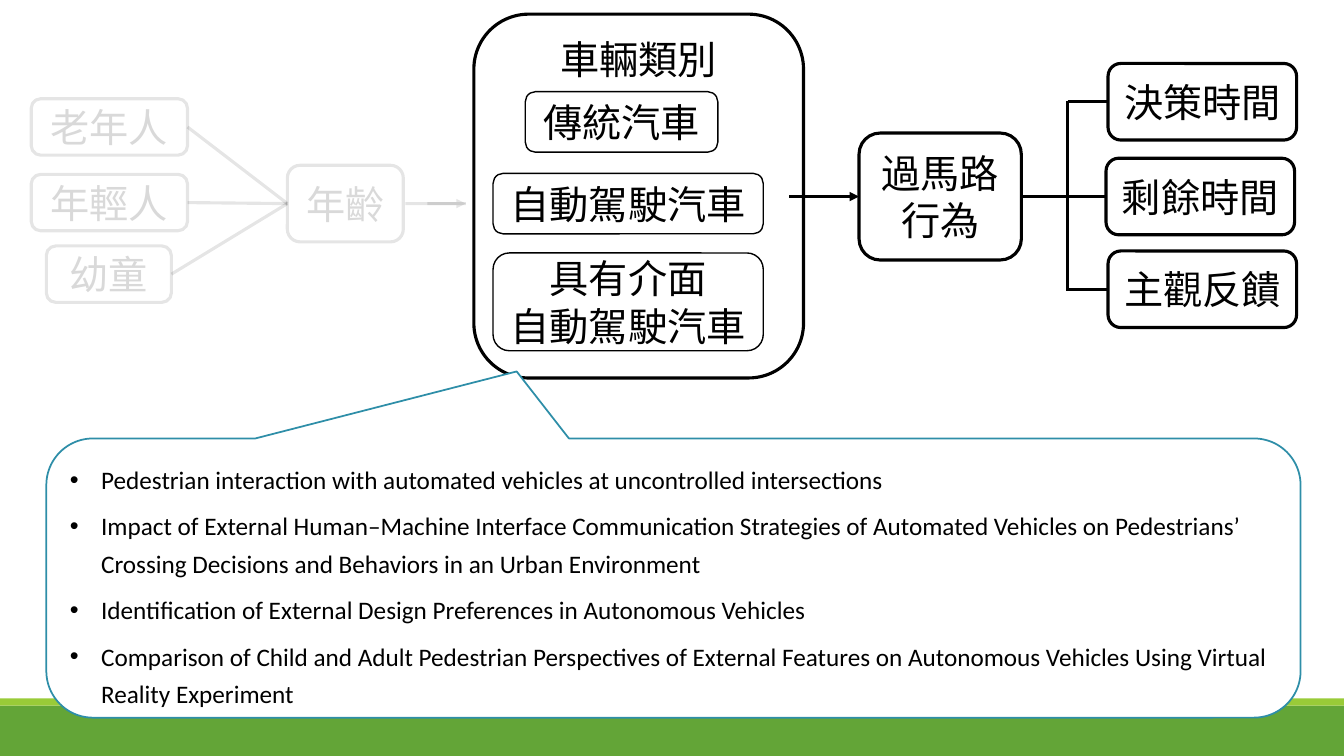
from dataclasses import dataclass

from pptx import Presentation
from pptx.dml.color import RGBColor
from pptx.enum.shapes import MSO_CONNECTOR, MSO_SHAPE as SHAPE
from pptx.enum.text import MSO_ANCHOR as ANCHOR, PP_ALIGN as ALIGN
from pptx.oxml.ns import qn
from pptx.util import Inches, Pt
from lxml.etree import SubElement

LEFT, RIGHT = 1, 3


@dataclass(frozen=True)
class Theme:
    font: str = "Calibri"
    ink: RGBColor = RGBColor.from_string("000000")
    pale_ink: RGBColor = RGBColor.from_string("D9D9D9")
    paper: RGBColor = RGBColor.from_string("FFFFFF")
    green: RGBColor = RGBColor.from_string("63A537")
    lime: RGBColor = RGBColor.from_string("99CB38")
    teal: RGBColor = RGBColor.from_string("2E8EA8")
    label_size: float = 28
    list_size: float = 18
    thick: float = 2.25
    thin: float = 1
    callout_line: float = 1.25
    faded_percent: int = 10


class SlideBuilder:
    def __init__(self, slide, theme):
        self.shapes = slide.shapes
        self.theme = theme

    def fade_line(self, shape):
        """Make the outline or connector almost transparent."""
        for color in shape._element.spPr.iter(qn("a:srgbClr")):
            alpha = SubElement(color, qn("a:alpha"))
            alpha.set("val", str(self.theme.faded_percent * 1000))

    def style_text(self, paragraph, size, color):
        for span in paragraph.runs:
            span.font.name = self.theme.font
            span.font.size = Pt(size)
            span.font.color.rgb = color

    def shape(self, kind, place, fill=None, line=None, width=1):
        shape = self.shapes.add_shape(kind, *map(Inches, place))
        shape.shadow.inherit = False
        if fill is None:
            shape.fill.background()
        else:
            shape.fill.solid()
            shape.fill.fore_color.rgb = fill
        if line is None:
            shape.line.fill.background()
        else:
            shape.line.color.rgb = line
            shape.line.width = Pt(width)
        return shape

    def bar(self, place, color):
        return self.shape(SHAPE.RECTANGLE, place, fill=color)

    def box(self, text, place, width=None, anchor=ANCHOR.MIDDLE, faded=False):
        theme = self.theme
        box = self.shape(SHAPE.ROUNDED_RECTANGLE, place,
                         line=theme.ink, width=width or theme.thick)
        frame = box.text_frame
        frame.word_wrap = True
        frame.vertical_anchor = anchor
        frame.text = text
        for para in frame.paragraphs:
            para.alignment = ALIGN.CENTER
            self.style_text(para, theme.label_size, theme.pale_ink if faded else theme.ink)
        if faded:
            self.fade_line(box)
        return box

    def line(self, start, end, begin=None, finish=None, arrow=False, faded=False):
        """Draw a line; begin and finish are optional (box, side) joints."""
        line = self.shapes.add_connector(
            MSO_CONNECTOR.STRAIGHT, *map(Inches, (*start, *end)))
        if begin:
            line.begin_connect(*begin)
        if finish:
            line.end_connect(*finish)
        line.line.color.rgb = self.theme.ink
        line.line.width = Pt(self.theme.thick)
        if arrow:
            SubElement(line.line._get_or_add_ln(), qn("a:tailEnd")).set("type", "triangle")
        SubElement(line._element.spPr, qn("a:effectLst"))
        if faded:
            self.fade_line(line)
        return line

    def callout(self, items, place, adjustments):
        theme = self.theme
        callout = self.shape(SHAPE.ROUNDED_RECTANGULAR_CALLOUT, place,
                             theme.paper, theme.teal, theme.callout_line)
        for index, value in enumerate(adjustments):
            callout.adjustments[index] = value
        frame = callout.text_frame
        frame.word_wrap = True
        frame.vertical_anchor = ANCHOR.TOP
        frame.text = "\n".join(items)
        for index, para in enumerate(frame.paragraphs):
            para.alignment = ALIGN.LEFT
            para.line_spacing = 1.25
            para.space_before = Pt(3 if index else 0)
            para.space_after = Pt(3)
            props = para._p.get_or_add_pPr()
            props.set("marL", str(Inches(0.31)))
            props.set("indent", str(-Inches(0.31)))
            SubElement(props, qn("a:buFont")).set("typeface", "Arial")
            SubElement(props, qn("a:buChar")).set("char", "•")
            self.style_text(para, theme.list_size, theme.ink)
        return callout


def add_age_branch(page):
    age = page.box("年齡", (2.85, 1.64, 1.15, 0.76), faded=True)
    groups = [
        ("老年人", (0.31, 0.98, 1.55, 0.56)),
        ("年輕人", (0.31, 1.73, 1.55, 0.56)),
        ("幼童", (0.46, 2.44, 1.24, 0.56)),
    ]
    for name, place in groups:
        group = page.box(name, place, faded=True)
        left, top, width, height = place
        page.line((left + width, top + height / 2), (2.85, 2.02),
                  (group, RIGHT), (age, LEFT), faded=True)
    page.line((4.02, 2.02), (4.62, 2.02), faded=True)
    page.line((4.24, 2.02), (4.62, 2.02), arrow=True, faded=True)


def add_vehicle_types(page):
    page.box("車輛類別", (4.7, 0.14, 3.27, 3.61), anchor=ANCHOR.TOP)
    for name, place in [
        ("傳統汽車", (5.21, 0.91, 1.91, 0.6)),
        ("自動駕駛汽車", (4.89, 1.72, 2.68, 0.6)),
        ("具有介面\n自動駕駛汽車", (4.89, 2.51, 2.68, 0.97)),
    ]:
        page.box(name, place, width=page.theme.thin)


def add_crossing_outcomes(page):
    trunk, middle = 10.59, 1.95
    behavior = page.box("過馬路行為", (8.52, 1.32, 1.61, 1.26))
    page.line((7.83, middle), (8.52, middle), finish=(behavior, LEFT), arrow=True)
    page.line((10.13, middle), (trunk, middle), begin=(behavior, RIGHT))
    page.line((trunk, 1), (trunk, 2.89))
    for name, left, top in [
        ("決策時間", 10.99, 0.63),
        ("剩餘時間", 10.97, 1.57),
        ("主觀反饋", 10.99, 2.49),
    ]:
        outcome = page.box(name, (left, top, 1.87, 0.76))
        level = top + 0.38
        page.line((trunk, level), (left, level), finish=(outcome, LEFT))


def main():
    deck = Presentation()
    deck.slide_width, deck.slide_height = Inches(13.33), Inches(7.5)
    theme = Theme()
    page = SlideBuilder(deck.slides.add_slide(deck.slide_layouts[6]), theme)
    page.bar((0, 7, 13.33, 0.5), theme.green)
    page.bar((0, 6.93, 13.33, 0.07), theme.lime)
    add_vehicle_types(page)
    add_age_branch(page)
    add_crossing_outcomes(page)
    page.callout([
        "Pedestrian interaction with automated vehicles at uncontrolled intersections",
        "Impact of External Human–Machine Interface Communication Strategies of Automated "
        "Vehicles on Pedestrians’ Crossing Decisions and Behaviors in an Urban Environment",
        "Identification of External Design Preferences in Autonomous Vehicles",
        "Comparison of Child and Adult Pedestrian Perspectives of External Features on "
        "Autonomous Vehicles Using Virtual Reality Experiment",
    ], (0.46, 4.35, 12.44, 2.77), (-0.125, -0.74, 0.167))
    deck.save("out.pptx")


if __name__ == "__main__":
    main()
